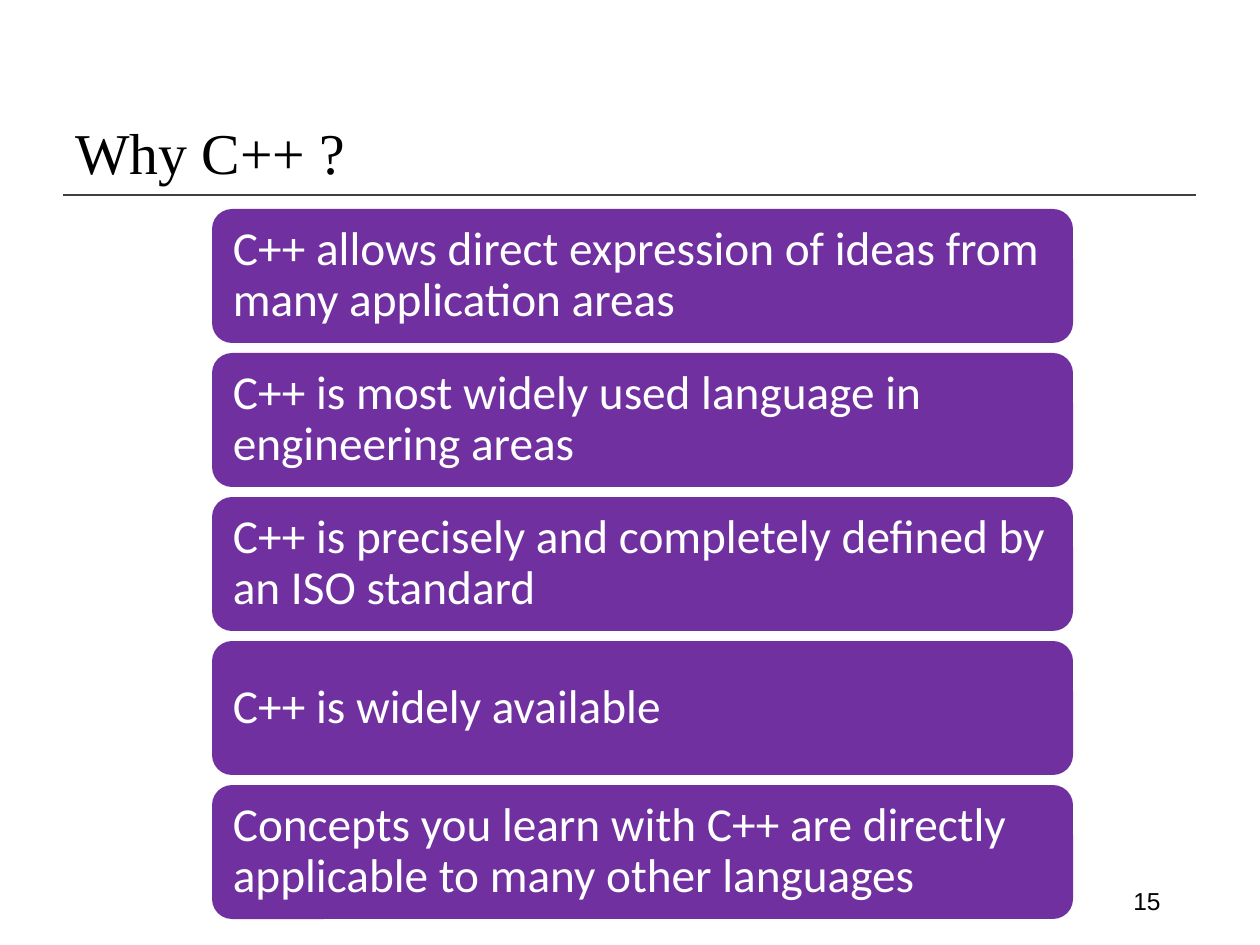
from lxml import etree
from pptx import Presentation
from pptx import util as u
from pptx.dml.color import RGBColor
from pptx.enum import shapes, text
from pptx.oxml.ns import qn

PX_PER_INCH = 126
REASONS = [
    "C++ allows direct expression of ideas from many application areas",
    "C++ is most widely used language in engineering areas",
    "C++ is precisely and completely defined by an ISO standard",
    "C++ is widely available",
    "Concepts you learn with C++ are directly applicable to many other languages",
]
CARD_LEFT, CARD_TOP, CARD_WIDTH, CARD_HEIGHT = 212, 209, 861, 134
CARD_PITCH = 144
CARD_RADIUS = 20
CARD_MARGIN = 15


def px(length):
    return u.Emu(round(length * u.Inches(1) / PX_PER_INCH))


def color(hex_string):
    return RGBColor.from_string(hex_string)


def write(shape, words, font, size, hex_color,
          align=text.PP_ALIGN.LEFT, line_spacing=1.0):
    """Fill a shape with one wrapped, vertically centred paragraph."""
    frame = shape.text_frame
    frame.word_wrap = True
    frame.vertical_anchor = text.MSO_ANCHOR.MIDDLE
    paragraph = frame.paragraphs[0]
    paragraph.text = words
    paragraph.alignment = align
    paragraph.line_spacing = line_spacing
    paragraph.font.name = font
    paragraph.font.size = u.Pt(size)
    paragraph.font.color.rgb = color(hex_color)


def add_label(slide, box, words, font, size, **layout):
    shape = slide.shapes.add_textbox(*map(px, box))
    write(shape, words, font, size, "000000", **layout)


def add_rule(slide, left, right, y):
    line = slide.shapes.add_connector(
        shapes.MSO_CONNECTOR.STRAIGHT, px(left), px(y), px(right), px(y))
    line.line.color.rgb = color("404040")
    line.line.width = u.Pt(1)
    etree.SubElement(line._element.spPr, qn("a:effectLst"))


def add_card(slide, top, words):
    card = slide.shapes.add_shape(
        shapes.MSO_SHAPE.ROUNDED_RECTANGLE,
        px(CARD_LEFT), px(top), px(CARD_WIDTH), px(CARD_HEIGHT))
    card.adjustments[0] = CARD_RADIUS / CARD_HEIGHT
    card.shadow.inherit = False
    card.fill.solid()
    card.fill.fore_color.rgb = color("7030A0")
    card.line.fill.background()
    frame = card.text_frame
    frame.margin_left = frame.margin_right = px(CARD_MARGIN)
    frame.margin_top = frame.margin_bottom = px(CARD_MARGIN)
    write(card, words, "Calibri", 27, "FFFFFF", line_spacing=0.9)


def main():
    presentation = Presentation()
    presentation.slide_width = px(1260)
    presentation.slide_height = px(945)
    slide = presentation.slides.add_slide(presentation.slide_layouts[6])

    add_rule(slide, 63, 1196, 195)
    add_label(slide, (890, 876, 283, 50), "15", "Arial", 14,
              align=text.PP_ALIGN.RIGHT)
    add_label(slide, (63, 77, 1134, 158), "Why C++ ?", "Times New Roman", 33,
              line_spacing=0.9)
    for index, reason in enumerate(REASONS):
        add_card(slide, CARD_TOP + index * CARD_PITCH, reason)

    presentation.save("out.pptx")


if __name__ == "__main__":
    main()
